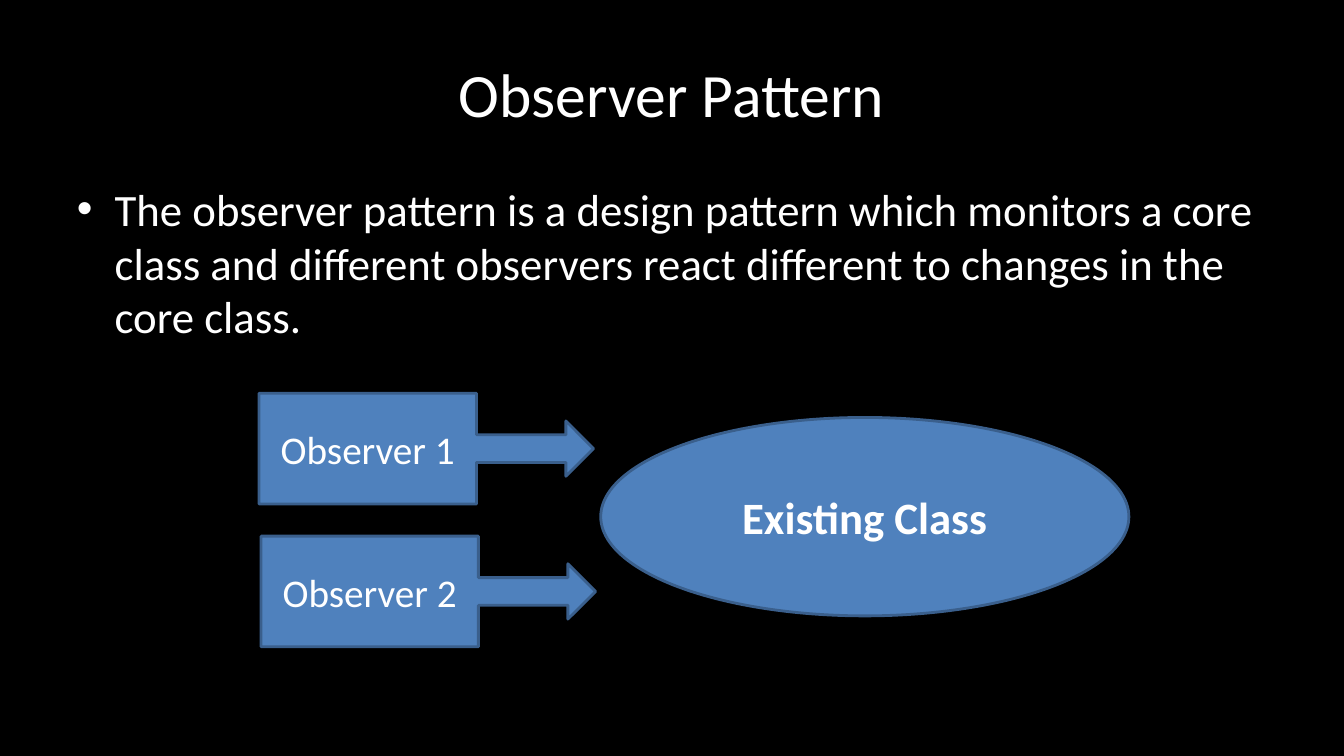
from pptx import Presentation
from pptx.dml.color import RGBColor
from pptx.enum.shapes import MSO_SHAPE as Shape
from pptx.enum.text import MSO_ANCHOR as Anchor, PP_ALIGN as Align
from pptx.oxml.ns import qn
from pptx.util import Cm, Pt
from lxml.etree import SubElement

BLACK = RGBColor(0x00, 0x00, 0x00)
WHITE = RGBColor(0xFF, 0xFF, 0xFF)
BLUE = RGBColor(0x4F, 0x81, 0xBD)
DARK_BLUE = RGBColor(0x3A, 0x5F, 0x8C)
FONT = "Calibri"

MARGIN = Cm(1.69)
CONTENT_WIDTH = Cm(30.48)


def write_text(text_frame, text, size, align, anchor, bold=False):
    text_frame.text = text
    text_frame.word_wrap = True
    text_frame.vertical_anchor = anchor
    paragraph = text_frame.paragraphs[0]
    paragraph.alignment = align
    font = paragraph.runs[0].font
    font.name = FONT
    font.size = Pt(size)
    font.bold = bold
    font.color.rgb = WHITE
    return paragraph


def set_title(slide, text):
    title = slide.shapes.title
    title.left, title.top = MARGIN, Cm(0.76)
    title.width, title.height = CONTENT_WIDTH, Cm(3.18)
    write_text(title.text_frame, text, 44, Align.CENTER, Anchor.MIDDLE)


def add_bullet_text(slide, text):
    box = slide.shapes.add_textbox(MARGIN, Cm(4.45), CONTENT_WIDTH, Cm(12.57))
    paragraph = write_text(box.text_frame, text, 32, Align.LEFT, Anchor.TOP)
    paragraph.space_before = Pt(6.4)
    properties = paragraph._p.get_or_add_pPr()
    indent = Cm(0.95)
    properties.set("marL", str(indent))
    properties.set("indent", str(-indent))
    SubElement(properties, qn("a:buFont")).set("typeface", "Arial")
    SubElement(properties, qn("a:buChar")).set("char", "•")


def add_labelled_shape(slide, kind, left, top, width, height, text, size, bold=False):
    shape = slide.shapes.add_shape(kind, Cm(left), Cm(top), Cm(width), Cm(height))
    shape.shadow.inherit = False
    shape.fill.solid()
    shape.fill.fore_color.rgb = BLUE
    shape.line.color.rgb = DARK_BLUE
    shape.line.width = Pt(2)
    write_text(shape.text_frame, text, size, Align.CENTER, Anchor.MIDDLE, bold)


def main():
    presentation = Presentation()
    presentation.slide_width = Cm(33.87)
    presentation.slide_height = Cm(19.05)
    slide = presentation.slides.add_slide(presentation.slide_layouts[5])
    slide.background.fill.solid()
    slide.background.fill.fore_color.rgb = BLACK

    set_title(slide, "Observer Pattern")
    add_bullet_text(
        slide,
        "The observer pattern is a design pattern which monitors a core class "
        "and different observers react different to changes in the core class.",
    )
    add_labelled_shape(slide, Shape.OVAL, 15.14, 10.52, 13.31, 5,
                       "Existing Class", 32, bold=True)
    observers = [("Observer 1", 6.53, 9.91), ("Observer 2", 6.58, 13.51)]
    for name, left, top in observers:
        add_labelled_shape(slide, Shape.RIGHT_ARROW_CALLOUT, left, top, 8.43, 2.79,
                           name, 28)

    presentation.save("out.pptx")


if __name__ == "__main__":
    main()
